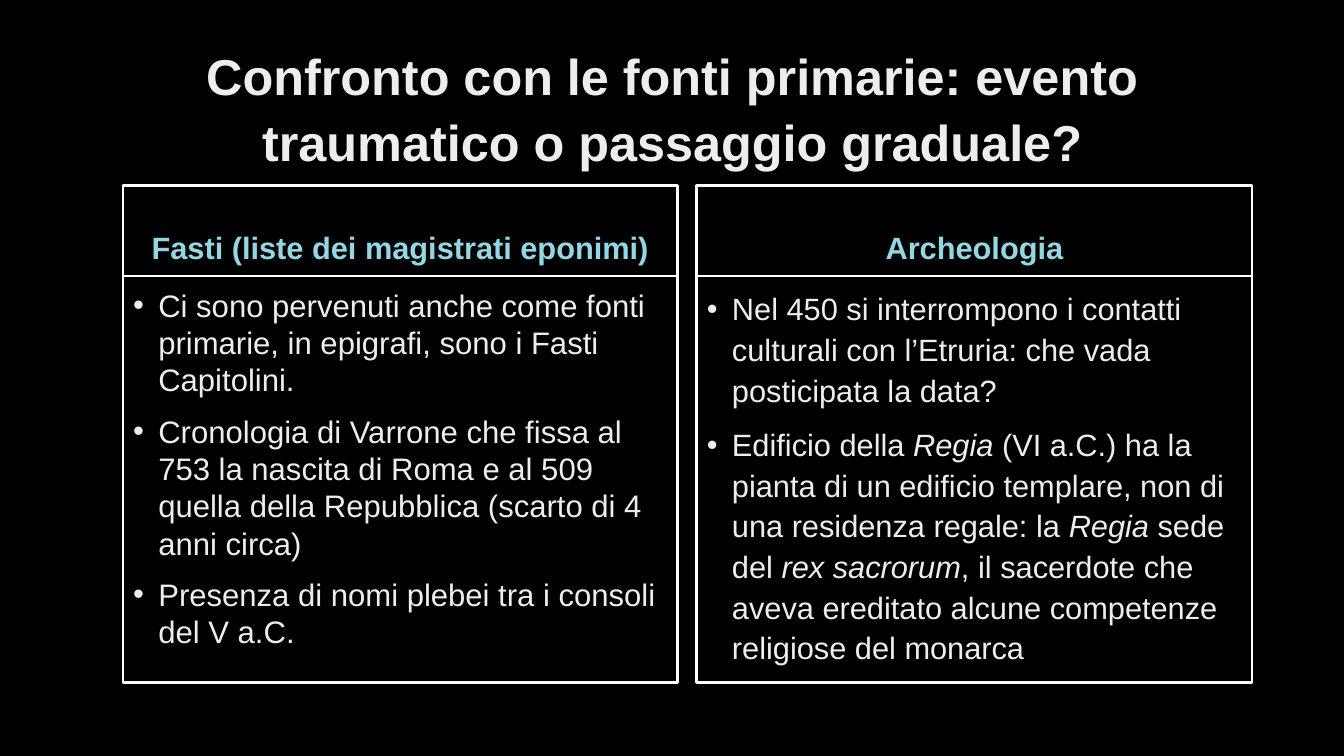
from dataclasses import dataclass

from lxml import etree
from pptx import Presentation
from pptx.dml.color import RGBColor
from pptx.enum import text
from pptx.oxml import ns
from pptx.util import Inches, Pt


@dataclass(frozen=True)
class Theme:
    font: str = "Arial"
    background: RGBColor = RGBColor(0x00, 0x00, 0x00)
    body: RGBColor = RGBColor(0xED, 0xED, 0xED)
    accent: RGBColor = RGBColor(0x94, 0xD7, 0xE4)
    border: RGBColor = RGBColor(0xFF, 0xFF, 0xFF)
    title_size: float = 36
    heading_size: float = 22
    list_sizes: tuple = (22.2, 22)


THEME = Theme()

TITLE = "Confronto con le fonti primarie: evento traumatico o passaggio graduale?"

# Each column: left, width, heading, list size, line spacing, bullets (*...* is italic)
COLUMNS = [
    (1.22, 5.5, "Fasti (liste dei magistrati eponimi)", THEME.list_sizes[0], 1.0, [
        "Ci sono pervenuti anche come fonti primarie, in epigrafi, sono i Fasti Capitolini.",
        "Cronologia di Varrone che fissa al 753 la nascita di Roma e al 509 quella "
        "della Repubblica (scarto di 4 anni circa)",
        "Presenza di nomi plebei tra i consoli del V a.C.",
    ]),
    (6.91, 5.51, "Archeologia", THEME.list_sizes[1], 1.1, [
        "Nel 450 si interrompono i contatti culturali con l’Etruria: che vada "
        "posticipata la data?",
        "Edificio della *Regia* (VI a.C.) ha la pianta di un edificio templare, non di "
        "una residenza regale: la *Regia* sede del *rex sacrorum*, il sacerdote che "
        "aveva ereditato alcune competenze religiose del monarca",
    ]),
]


def place(sp, left, top, width, height, anchor):
    """Move a placeholder and return its text frame."""
    sp.left, sp.top = Inches(left), Inches(top)
    sp.width, sp.height = Inches(width), Inches(height)
    tf = sp.text_frame
    tf.word_wrap = True
    tf.auto_size = text.MSO_AUTO_SIZE.NONE
    tf.vertical_anchor = anchor
    return tf


def add_border(sp):
    sp.line.color.rgb = THEME.border
    sp.line.width = Pt(1.75)


def add_bullet(p):
    pPr = p._p.get_or_add_pPr()
    pPr.set("marL", str(Inches(0.25)))
    pPr.set("indent", str(Inches(-0.25)))
    etree.SubElement(pPr, ns.qn("a:buFont"), typeface=THEME.font)
    etree.SubElement(pPr, ns.qn("a:buChar"), char="•")


def format_runs(p, size, color, bold=False):
    for r in p.runs:
        r.font.name = THEME.font
        r.font.size = Pt(size)
        r.font.bold = bold
        r.font.color.rgb = color


def set_heading(tf, words, size, color):
    """Fill a frame with one bold centred paragraph."""
    tf.text = words
    p = tf.paragraphs[0]
    p.alignment = text.PP_ALIGN.CENTER
    p.line_spacing = 1.1
    p.space_before = Pt(0)
    format_runs(p, size, color, bold=True)


def set_bullets(tf, items, size, spacing):
    for i, item in enumerate(items):
        p = tf.add_paragraph() if i else tf.paragraphs[0]
        add_bullet(p)
        p.line_spacing = spacing
        p.space_before = Pt(10 if i else 0)
        for j, part in enumerate(item.split("*")):
            r = p.add_run()
            r.text = part
            r.font.italic = j % 2 == 1
        format_runs(p, size, THEME.body)


def add_column(heading_sp, list_sp, left, width, heading, size, spacing, items):
    # Heading box
    tf = place(heading_sp, left, 1.84, width, 0.9, text.MSO_ANCHOR.BOTTOM)
    tf.margin_bottom = Inches(0.1)
    set_heading(tf, heading, THEME.heading_size, THEME.accent)
    add_border(heading_sp)
    # List box
    tf = place(list_sp, left, 2.74, width, 4.03, text.MSO_ANCHOR.TOP)
    tf.margin_top = Inches(0.1)
    set_bullets(tf, items, size, spacing)
    add_border(list_sp)


def main():
    prs = Presentation()
    prs.slide_width, prs.slide_height = Inches(13.33), Inches(7.5)
    s = prs.slides.add_slide(prs.slide_layouts.get_by_name("Comparison"))
    s.background.fill.solid()
    s.background.fill.fore_color.rgb = THEME.background

    # Title
    tf = place(s.shapes.title, 0.92, 0.32, 11.5, 1.45, text.MSO_ANCHOR.MIDDLE)
    set_heading(tf, TITLE, THEME.title_size, THEME.body)

    # Two compared columns, using placeholders 1-2 and 3-4
    for i, column in enumerate(COLUMNS):
        add_column(s.placeholders[2 * i + 1], s.placeholders[2 * i + 2], *column)

    prs.save("out.pptx")


if __name__ == "__main__":
    main()
